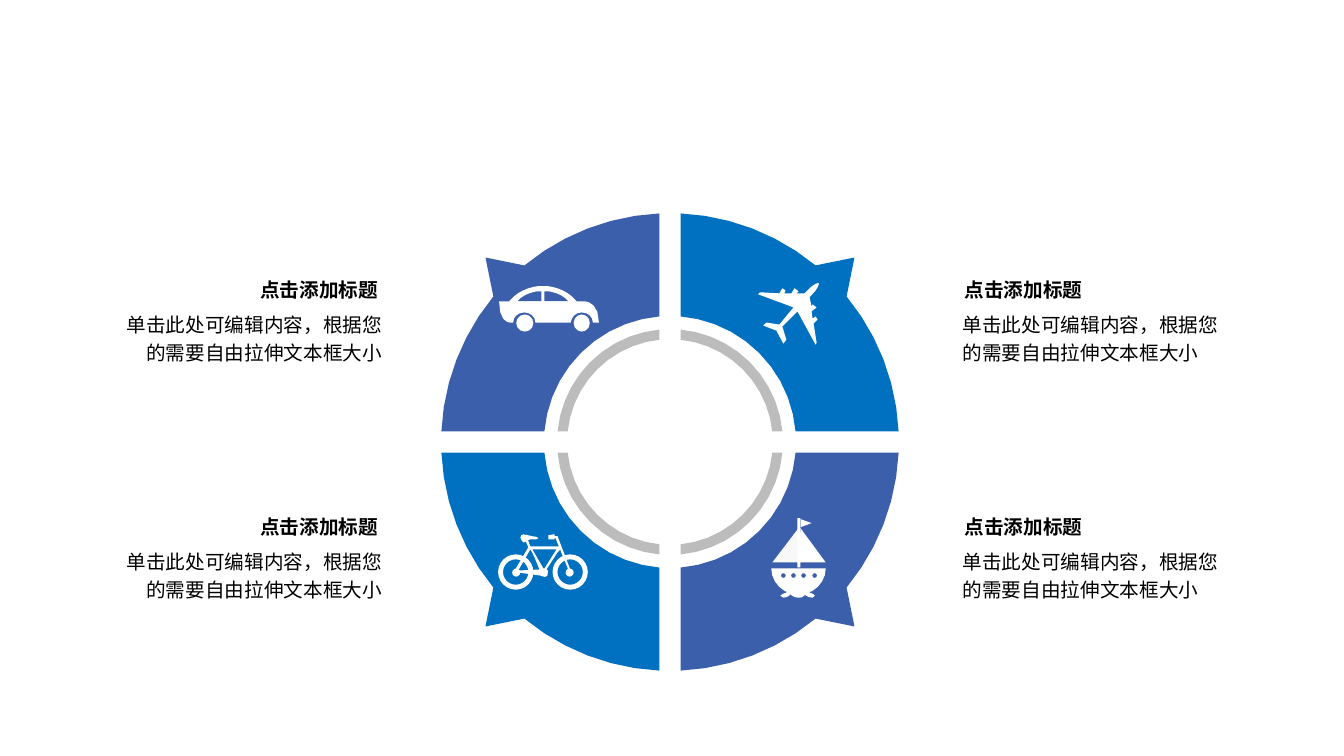
"""Build a slide with a four-part transport wheel and four captions."""
from dataclasses import dataclass
from math import asin, cos, dist, pi, radians, sin, sqrt

from lxml import etree
from pptx import Presentation
from pptx import util as u
from pptx.dml.color import RGBColor
from pptx.enum import shapes, text
from pptx.oxml.ns import qn

PX = 9144
WHITE = RGBColor(0xFF, 0xFF, 0xFF)
PALE = RGBColor(0xF8, 0xF8, 0xF8)
GREY = RGBColor(0xBB, 0xBC, 0xBB)
INDIGO = RGBColor(0x3B, 0x5F, 0xAB)
BLUE = RGBColor(0x00, 0x70, 0xC0)
BLACK = RGBColor(0, 0, 0)

CENTRE_X, CENTRE_Y, HALF_GAP = 664.5, 438.5, 10.5
WHEEL_OUTER, WHEEL_INNER = 227, 125
RING_OUTER, RING_INNER = 112, 102
TAIL_START, TAIL_END, TAIL_TIP = radians(39.5), radians(50.5), 183
TITLE = "点击添加标题"
BODY = "单击此处可编辑内容，根据您的需要自由拉伸文本框大小"

Contour = list[tuple[float, ...]]


@dataclass
class Outline:
    """Contours of corners (x, y) and curves (x1, y1, x2, y2, x, y)."""
    contours: list[Contour]
    colour: RGBColor = WHITE


@dataclass
class Preset:
    """A preset shape and its frame."""
    kind: shapes.MSO_SHAPE
    frame: tuple[int, int, int, int]


@dataclass
class Quarter:
    """One wheel quarter, by the signs of its direction from the centre."""
    side: int
    level: int
    colour: RGBColor


@dataclass
class Caption:
    """A text box with its wording and style."""
    frame: tuple[int, int, int, int]
    words: str
    font: str
    bold: bool
    align: text.PP_ALIGN
    spacing: float
    inset: int


def emu(px: float) -> int:
    """Turn px into EMU."""
    return round(px * PX)


def arc(radius: float, start: float, end: float, steps: int) -> Contour:
    """Sample an arc; angles run from the vertical axis."""
    angles = [start + (end - start) * step / steps for step in range(steps + 1)]
    return [(radius * sin(a), radius * cos(a)) for a in angles]


def quarter_arc(radius: float) -> Contour:
    """Sample a quarter circle between the two gaps."""
    trim = asin(HALF_GAP / radius)
    return arc(radius, trim, pi / 2 - trim, 10)


def band(quarter: Quarter, outer: Contour, inner: float) -> Contour:
    """Close an outer edge with an inner arc and place it in its quarter."""
    edge = outer + quarter_arc(inner)[::-1]
    return [(CENTRE_X + quarter.side * x, CENTRE_Y + quarter.level * y) for x, y in edge]


def tailed_arc() -> Contour:
    """Return the outer wheel edge with its pointed tail."""
    trim = asin(HALF_GAP / WHEEL_OUTER)
    return (arc(WHEEL_OUTER, trim, TAIL_START, 6) + [(TAIL_TIP, TAIL_TIP)]
            + arc(WHEEL_OUTER, TAIL_END, pi / 2 - trim, 6))


def porthole(x: int) -> Contour:
    """Return a small round hole in the hull."""
    return [(x + dx, 571 + dy) for dx, dy in arc(2.4, 0, 2 * pi, 8)[:-1]]


def flatten(contour: Contour) -> list[tuple[int, int]]:
    """Turn corners and curves into EMU points, with more steps for longer curves."""
    points = [contour[0]]
    for piece in contour[1:]:
        if len(piece) == 2:
            points.append(piece)
            continue
        controls = [points[-1], piece[:2], piece[2:4], piece[4:]]
        steps = max(2, round(sqrt(dist(controls[0], controls[3]))))
        for step in range(1, steps + 1):
            t = step / steps
            weights = ((1 - t) ** 3, 3 * t * (1 - t) ** 2, 3 * t * t * (1 - t), t ** 3)
            points.append(tuple(sum(w * c[axis] for w, c in zip(weights, controls))
                                for axis in (0, 1)))
    return [(emu(x), emu(y)) for x, y in points]


def paint(shape, colour: RGBColor) -> None:
    """Give a shape a flat fill without line or shadow."""
    shape.fill.solid()
    shape.fill.fore_color.rgb = colour
    shape.line.fill.background()
    shape.shadow.inherit = False


def draw_outline(page, outline: Outline) -> None:
    """Draw all contours as one freeform."""
    first, *others = [flatten(contour) for contour in outline.contours]
    builder = page.shapes.build_freeform(*first[0], scale=1.0)
    builder.add_line_segments(first[1:], close=True)
    for points in others:
        builder.move_to(*points[0])
        builder.add_line_segments(points[1:], close=True)
    paint(builder.convert_to_shape(), outline.colour)


def draw_preset(page, preset: Preset) -> None:
    """Draw a white preset shape."""
    shape = page.shapes.add_shape(preset.kind, *map(emu, preset.frame))
    if preset.kind == shapes.MSO_SHAPE.DONUT:
        shape.adjustments[0] = 0.14
    paint(shape, WHITE)


def draw_caption(page, caption: Caption) -> None:
    """Draw a caption text box."""
    box = page.shapes.add_textbox(*map(emu, caption.frame))
    frame = {"word_wrap": True, "vertical_anchor": text.MSO_ANCHOR.MIDDLE,
             "margin_top": emu(caption.inset), "margin_bottom": emu(caption.inset)}
    for name, value in frame.items():
        setattr(box.text_frame, name, value)
    para = box.text_frame.paragraphs[0]
    para.alignment, para.line_spacing = caption.align, caption.spacing
    span = para.add_run()
    span.text = caption.words
    span.font.color.rgb = BLACK
    for name, value in {"size": u.Pt(14), "bold": caption.bold, "name": caption.font}.items():
        setattr(span.font, name, value)
    etree.SubElement(span._r.get_or_add_rPr(), qn("a:ea"), typeface=caption.font)


QUARTERS = [Quarter(-1, -1, INDIGO), Quarter(-1, 1, BLUE),
            Quarter(1, -1, BLUE), Quarter(1, 1, INDIGO)]
OVAL, DONUT, RECTANGLE = (shapes.MSO_SHAPE.OVAL, shapes.MSO_SHAPE.DONUT,
                          shapes.MSO_SHAPE.RECTANGLE)
CAR = [
    Outline([[(495, 299), (579, 299), (579, 299, 594, 298, 594, 320), (588, 320),
              (588, 314, 583, 310, 577, 310), (571, 310, 567, 314, 566, 320), (531, 320),
              (531, 314, 526, 310, 520, 310), (514, 310, 509, 314, 509, 320), (507, 320),
              (507, 320, 495, 322, 495, 299)]]),
    Outline([[(505, 299), (513, 289, 525, 285, 533, 284), (544, 284),
              (552, 285, 564, 289, 572, 299), (575, 304), (502, 304)],
             [(544, 289), (533, 289), (527, 290, 519, 292, 513, 299),
              (564, 299), (558, 292, 550, 290, 544, 289)]]),
    Preset(RECTANGLE, (537, 285, 3, 16)),
    Preset(OVAL, (512, 312, 17, 17)), Preset(OVAL, (569, 312, 16, 17))]
PLANE = [
    Outline([[(803, 295), (805, 304), (806, 302), (810, 305), (805, 309), (806, 316),
              (809, 314), (811, 317), (807, 321), (810, 340), (809, 342), (791, 309),
              (776, 324), (780, 337), (777, 341), (770, 328), (795, 297), (812, 281),
              (812, 281, 814, 284, 803, 295)]]),
    Outline([[(798, 291), (790, 291), (792, 289), (788, 286), (785, 291), (778, 291),
              (779, 288), (776, 286), (773, 291), (754, 290), (752, 292), (787, 305),
              (773, 322), (760, 320), (757, 323), (770, 328), (812, 281),
              (812, 281, 809, 279, 798, 291)]])]
BICYCLE = [
    Preset(DONUT, (494, 550, 35, 35)), Preset(DONUT, (548, 550, 35, 35)),
    Outline([[(566, 566), (553, 532), (545, 532), (545, 534), (551, 534), (564, 566)]]),
    Outline([[(555, 542), (526, 542), (523, 534), (521, 536), (524, 543), (511, 565),
              (514, 568), (536, 571), (536, 571, 542, 574, 543, 571),
              (546, 566, 542, 565, 542, 565), (553, 548), (556, 545)],
             [(514, 566), (526, 545), (529, 549, 535, 565, 535, 565)],
             [(540, 564), (539, 564), (528, 545), (552, 545)]]),
    Outline([[(534, 534), (534, 534, 533, 532, 528, 532), (523, 531, 518, 529, 517, 531),
              (515, 533, 517, 536, 519, 538), (521, 539, 524, 535, 526, 535),
              (527, 535, 533, 536, 534, 534)]]),
    Preset(OVAL, (508, 564, 8, 8)), Preset(OVAL, (561, 564, 8, 8)),
    Outline([[(550, 535), (550, 530), (544, 531), (544, 535)]])]
BOAT = [
    Outline([[(765, 564), (765, 578, 777, 590, 792, 590), (807, 590, 819, 578, 819, 564)],
             *[porthole(x) for x in (777, 787, 797, 808)]]),
    Outline([[(792, 524), (766, 558), (794, 558)]], PALE),
    Outline([[(794, 524), (819, 558), (792, 558)]]),
    Preset(RECTANGLE, (791, 514, 3, 49)),
    Outline([[(782, 584), (782, 586, 780, 589, 777, 589), (773, 589, 773, 593, 777, 593),
              (782, 593, 786, 589, 787, 584), (787, 581, 782, 581, 782, 584)]]),
    Outline([[(796, 584), (796, 590, 787, 590, 787, 584), (786, 581, 782, 581, 782, 584),
              (782, 589, 786, 593, 792, 593), (796, 594, 801, 589, 801, 584),
              (801, 581, 796, 581, 796, 584)]]),
    Outline([[(806, 589), (803, 589, 801, 586, 801, 584), (801, 581, 796, 581, 796, 584),
              (796, 589, 800, 593, 806, 593), (809, 593, 809, 589, 806, 589)]]),
    Outline([[(794, 515), (805, 519), (794, 523)]])]


def main() -> None:
    """Draw the slide and save it."""
    deck = Presentation()
    deck.slide_width, deck.slide_height = emu(1333), emu(750)
    page = deck.slides.add_slide(deck.slide_layouts[6])
    draw_outline(page, Outline([band(q, quarter_arc(RING_OUTER), RING_INNER)
                                for q in QUARTERS], GREY))
    for quarter in QUARTERS:
        draw_outline(page, Outline([band(quarter, tailed_arc(), WHEEL_INNER)], quarter.colour))
    for part in CAR + PLANE + BICYCLE + BOAT:
        (draw_outline if isinstance(part, Outline) else draw_preset)(page, part)
    for top in (270, 505):
        for title_x, body_x, align in ((232, 106, text.PP_ALIGN.RIGHT),
                                       (947, 945, text.PP_ALIGN.LEFT)):
            draw_caption(page, Caption((title_x, top, 153, 34), TITLE,
                                       "Noto Sans CJK SC", True, align, 1.0, 3))
            draw_caption(page, Caption((body_x, top + 32, 283, 64), BODY,
                                       "Arial", False, align, 1.2, 5))
    deck.save("out.pptx")


if __name__ == "__main__":
    main()
